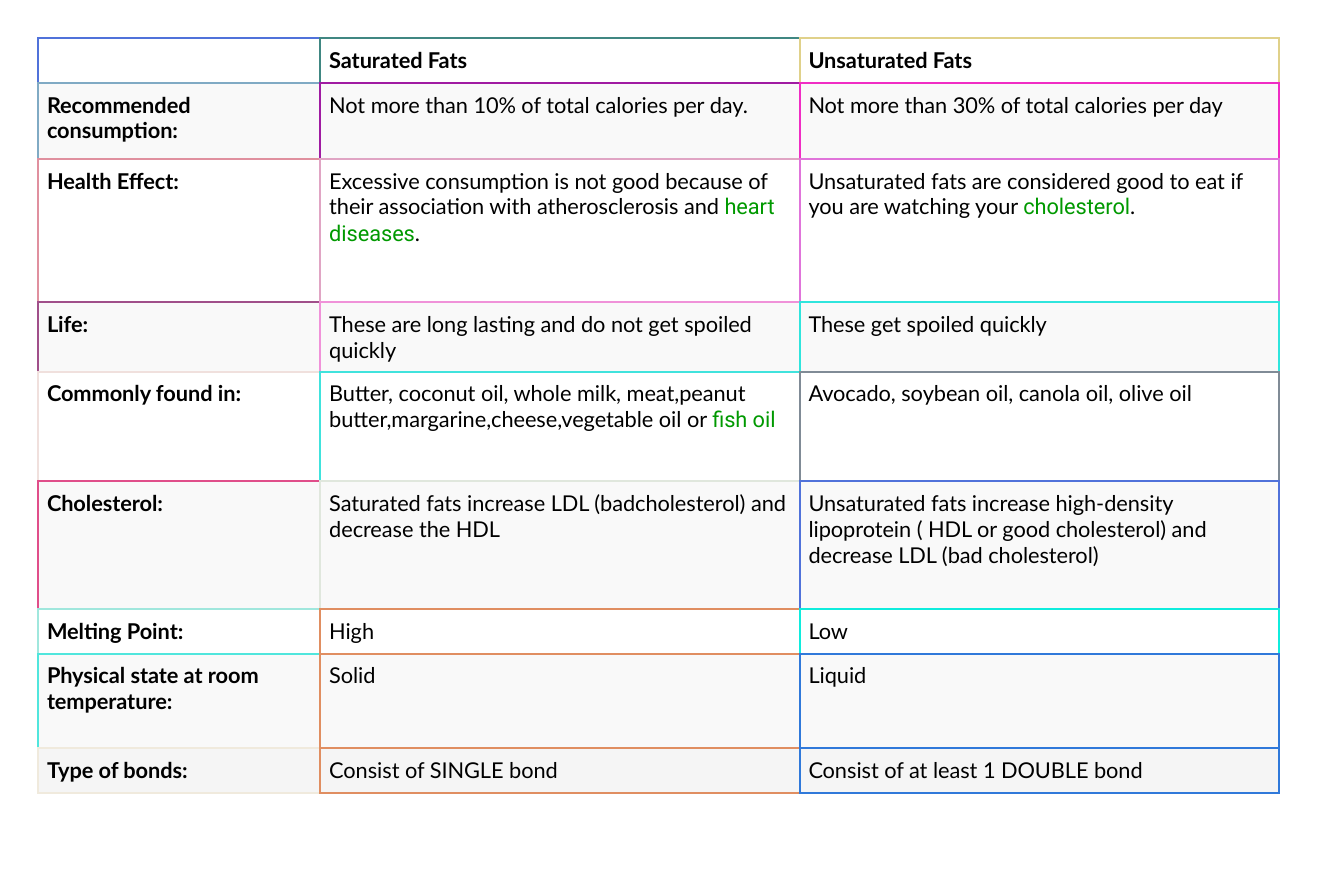
import pptx
import pptx.util
import pptx.dml.color
import lxml.etree
from dataclasses import dataclass
from pptx.oxml.ns import qn


@dataclass(frozen=True)
class Theme:
    body_font: str = "Lato"
    term_font: str = "Roboto"
    size: float = 7
    text: str = "000000"
    term: str = "009900"
    border: float = 0.75
    inset: float = 0.04


theme = Theme()

comparison = [
    ("", "Saturated Fats", "Unsaturated Fats"),
    ("Recommended consumption:",
     "Not more than 10% of total calories per day.",
     "Not more than 30% of total calories per day"),
    ("Health Effect:",
     ("Excessive consumption is not good because of their association with atherosclerosis and ",
      "heart diseases", "."),
     ("Unsaturated fats are considered good to eat if you are watching your ", "cholesterol", ".")),
    ("Life:", "These are long lasting and do not get spoiled quickly", "These get spoiled quickly"),
    ("Commonly found in:",
     ("Butter, coconut oil, whole milk, meat,peanut butter,margarine,cheese,vegetable oil or ",
      "fish oil"),
     "Avocado, soybean oil, canola oil, olive oil"),
    ("Cholesterol:",
     "Saturated fats increase LDL (badcholesterol) and decrease the HDL",
     "Unsaturated fats increase high-density lipoprotein ( HDL or good cholesterol) "
     "and decrease LDL (bad cholesterol)"),
    ("Melting Point:", "High", "Low"),
    ("Physical state at room temperature:", "Solid", "Liquid"),
    ("Type of bonds:", "Consist of SINGLE bond", "Consist of at least 1 DOUBLE bond"),
]
accents = [
    ("5072DA", "408782", "E0D18A"),
    ("80AAC4", "A01BA2", "F02DC4"),
    ("E0909F", "E0A5C4", "E074DA"),
    ("A04F8A", "F092D9", "30E5DD"),
    ("F0E0DD", "40E3DD", "808B96"),
    ("E04E8A", "E0E7DD", "5072DA"),
    ("A0E7DD", "E08E61", "10ECDD"),
    ("50E6DD", "E08E61", "3079DA"),
    ("F0EADD", "E08E61", "3079DA"),
]
row_fills = ["FFFFFF", "F9F9F9"] * 4 + ["F5F5F5"]
column_widths = [1.26, 2.14, 2.14]
row_heights = [0.2, 0.34, 0.64, 0.31, 0.49, 0.57, 0.2, 0.42, 0.2]
margin = 0.17

inches = pptx.util.Inches
rgb = pptx.dml.color.RGBColor.from_string
last_row, last_column = len(row_heights) - 1, len(column_widths) - 1


def write(cell, content, bold):
    cell.margin_left = cell.margin_right = inches(theme.inset)
    cell.margin_top = cell.margin_bottom = inches(theme.inset)
    paragraph = cell.text_frame.paragraphs[0]
    paragraph.font.name = theme.body_font
    paragraph.font.size = pptx.util.Pt(theme.size)
    paragraph.font.bold = bold
    paragraph.font.color.rgb = rgb(theme.text)
    pieces = (content,) if isinstance(content, str) else content
    for position, piece in enumerate(pieces):
        if piece:
            run = paragraph.add_run()
            run.text = piece
            if position == 1:
                run.font.name = theme.term_font
                run.font.color.rgb = rgb(theme.term)
    ending = lxml.etree.SubElement(paragraph._p, qn("a:endParaRPr"))
    ending.set("sz", str(int(theme.size * 100)))


def outline(cell, row, column):
    own = accents[row][column]
    sides = {
        "a:lnL": own,
        "a:lnR": accents[row][min(column + 1, last_column)],
        "a:lnT": own,
        "a:lnB": accents[min(row + 1, last_row)][column],
    }
    properties = cell._tc.get_or_add_tcPr()
    for side, color in sides.items():
        line = lxml.etree.SubElement(properties, qn(side), w=str(pptx.util.Pt(theme.border)))
        paint = lxml.etree.SubElement(line, qn("a:solidFill"))
        lxml.etree.SubElement(paint, qn("a:srgbClr"), val=color)


deck = pptx.Presentation()
deck.slide_width, deck.slide_height = inches(6), inches(4)
slide = deck.slides.add_slide(deck.slide_layouts[6])
fats = slide.shapes.add_table(
    len(row_heights), len(column_widths), inches(margin), inches(margin),
    inches(sum(column_widths)), inches(sum(row_heights))).table
fats.first_row = fats.horz_banding = False

for column, width in enumerate(column_widths):
    fats.columns[column].width = inches(width)
for row, height in enumerate(row_heights):
    fats.rows[row].height = inches(height)
    for column, content in enumerate(comparison[row]):
        cell = fats.cell(row, column)
        write(cell, content, bold=row == 0 or column == 0)
        outline(cell, row, column)
        cell.fill.solid()
        cell.fill.fore_color.rgb = rgb(row_fills[row])

deck.save("out.pptx")
